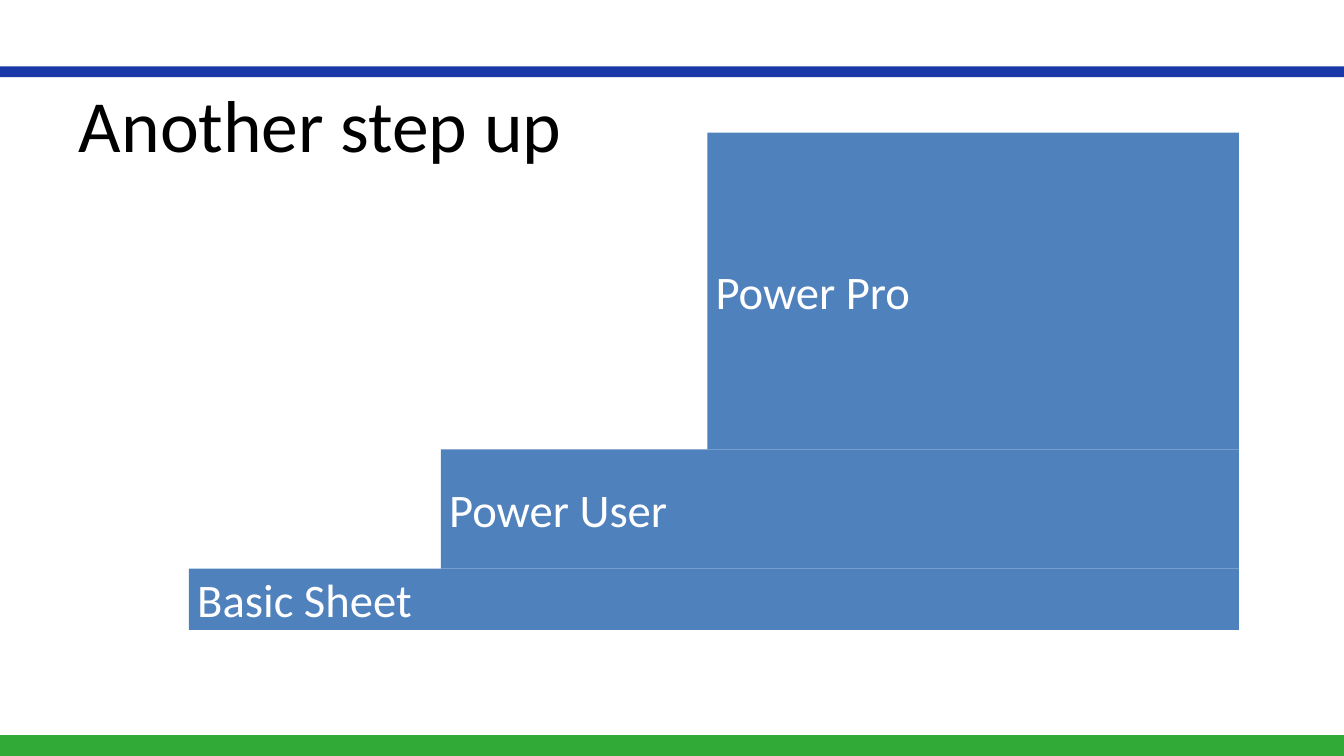
from pptx import Presentation
from pptx.dml.color import RGBColor
from pptx.enum import shapes, text
from pptx.util import Inches, Pt

FONT = "Calibri"
BLACK = RGBColor(0x00, 0x00, 0x00)
WHITE = RGBColor(0xFF, 0xFF, 0xFF)
BAND_BLUE = RGBColor(0x18, 0x38, 0xA7)
BAND_GREEN = RGBColor(0x31, 0xAA, 0x38)
STEP_BLUE = RGBColor(0x4F, 0x81, 0xBD)

SLIDE_WIDTH, SLIDE_HEIGHT = 16, 9
STEPS_RIGHT, STEPS_BOTTOM = 14.75, 7.5
# Label, left edge and height of each step, from the bottom up
STEPS = [
    ("Basic Sheet", 2.25, 0.73),
    ("Power User", 5.25, 1.42),
    ("Power Pro", 8.42, 3.77),
]


def add_block(page, left, top, width, height, color):
    block = page.shapes.add_shape(
        shapes.MSO_SHAPE.RECTANGLE,
        Inches(left), Inches(top), Inches(width), Inches(height))
    block.shadow.inherit = False
    block.fill.solid()
    block.fill.fore_color.rgb = color
    block.line.fill.background()
    return block


def write_line(shape, words, size, color):
    """Put one left-aligned, vertically centred line of text in a shape."""
    frame = shape.text_frame
    frame.word_wrap = True
    frame.vertical_anchor = text.MSO_ANCHOR.MIDDLE
    para = frame.paragraphs[0]
    para.text = words
    para.alignment = text.PP_ALIGN.LEFT
    para.font.name = FONT
    para.font.size = Pt(size)
    para.font.color.rgb = color


def add_title(page, words):
    box = page.shapes.add_textbox(Inches(0.8), Inches(1), Inches(14.4), Inches(0.92))
    write_line(box, words, 63, BLACK)
    frame = box.text_frame
    frame.margin_left = frame.margin_right = Inches(0.14)
    frame.margin_top = frame.margin_bottom = Inches(0.07)


def add_steps(page):
    """Stack the steps upwards, all ending at the same right edge."""
    top = STEPS_BOTTOM
    for label, left, height in STEPS:
        top -= height
        step = add_block(page, left, top, STEPS_RIGHT - left, height, STEP_BLUE)
        write_line(step, label, 40, WHITE)


def main():
    deck = Presentation()
    deck.slide_width = Inches(SLIDE_WIDTH)
    deck.slide_height = Inches(SLIDE_HEIGHT)
    page = deck.slides.add_slide(deck.slide_layouts[6])
    add_block(page, 0, 0.79, SLIDE_WIDTH, 0.13, BAND_BLUE)
    add_block(page, 0, 8.75, SLIDE_WIDTH, 0.25, BAND_GREEN)
    add_title(page, "Another step up")
    add_steps(page)
    deck.save("out.pptx")


if __name__ == "__main__":
    main()
